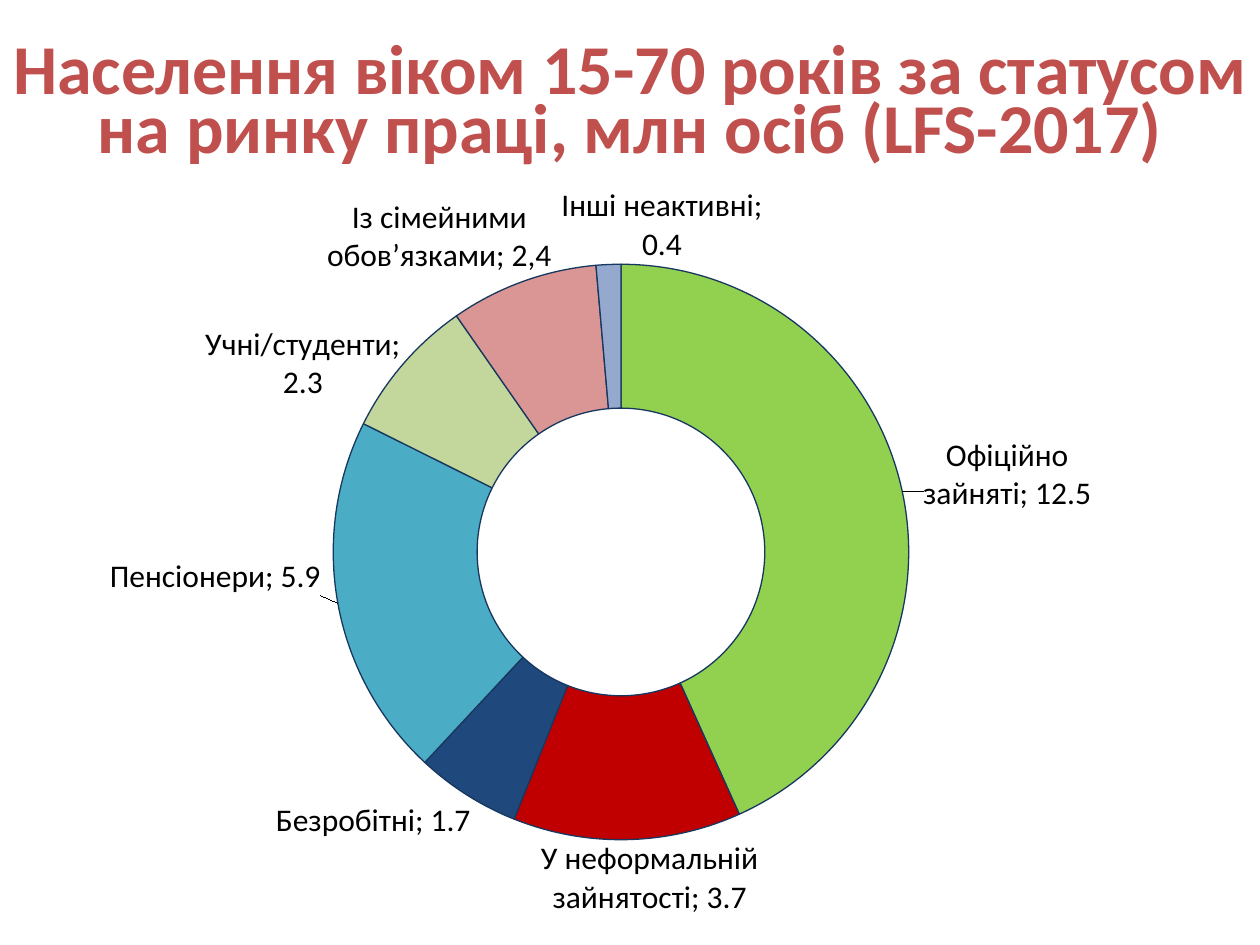
from math import cos, pi, sin

from lxml import etree
from pptx import Presentation
from pptx import util as u
from pptx.chart import data as chart_data
from pptx.dml import color
from pptx.enum import chart as charts, text
from pptx.oxml import parse_xml
from pptx.oxml.ns import nsdecls, qn

Cm = u.Cm
FONT = "Calibri"
COLOURS = {
    "title": "C0504D", "text": "000000", "outline": "17375E",
    "official": "92D050", "informal": "C00000", "unemployed": "1F497D",
    "retired": "4BACC6", "students": "C3D69B", "family": "D99694", "other": "95A9CF",
}
NUMBER_FORMAT = r"##0.0;\-##0.0;0"
# Ring box as fractions of the chart: left, top, width, height
PLOT = {"x": 0.248, "y": 0.108, "w": 0.48, "h": 0.784}

# Category, value, colour, label centre in cm from the chart corner, own label text
STATUSES = [
    ("Офіційно зайняті", 12.5, "official", (19.59, 5.84), None),
    ("У неформальній зайнятості", 3.7, "informal", (12.39, 13.97), None),
    ("Безробітні", 1.7, "unemployed", (6.81, 12.82), None),
    ("Пенсіонери", 5.9, "retired", (3.64, 7.9), None),
    ("Учні/студенти", 2.3, "students", (5.4, 3.6), None),
    ('Виконують сімейні обов"язки', 2.4, "family", (8.16, 1.04),
     "Із сімейними обов’язками; 2,4"),
    ("Інші неактивні", 0.4, "other", (12.64, 0.8), None),
]


def rgb(name):
    return color.RGBColor.from_string(COLOURS[name])


def set_font(font, size, colour, bold=False):
    for attribute, value in {"name": FONT, "size": u.Pt(size), "bold": bold}.items():
        setattr(font, attribute, value)
    font.color.rgb = rgb(colour)


def add_title(slide, left, top, width, height):
    frame = slide.shapes.add_textbox(left, top, width, height).text_frame
    settings = {"word_wrap": True, "vertical_anchor": text.MSO_ANCHOR.MIDDLE,
                "margin_left": 0, "margin_right": 0}
    for attribute, value in settings.items():
        setattr(frame, attribute, value)
    paragraph = frame.paragraphs[0]
    paragraph.alignment = text.PP_ALIGN.CENTER
    paragraph.line_spacing = 0.7
    run = paragraph.add_run()
    run.text = "Населення віком 15-70 років за статусом на ринку праці, млн осіб (LFS-2017)"
    set_font(run.font, 40, "title", bold=True)


def label_offsets(width, height):
    """Shift of each label from the middle of its ring segment, as chart fractions."""
    centre_x = (PLOT["x"] + PLOT["w"] / 2) * width
    centre_y = (PLOT["y"] + PLOT["h"] / 2) * height
    radius = min(PLOT["w"] * width, PLOT["h"] * height) / 2 * 0.75
    total = sum(status[1] for status in STATUSES)
    passed = 0
    for _, value, _, (x, y), _ in STATUSES:
        angle = 2 * pi * (passed + value / 2) / total
        passed += value
        yield ((Cm(x) - centre_x - radius * sin(angle)) / width,
               (Cm(y) - centre_y + radius * cos(angle)) / height)


def layout_xml(**values):
    items = "".join(f'<c:{key} val="{value}"/>' for key, value in values.items())
    return f"<c:layout><c:manualLayout>{items}</c:manualLayout></c:layout>"


def labels_xml(width, height):
    number_format = f'<c:numFmt formatCode="{NUMBER_FORMAT}" sourceLinked="0"/>'
    shown = ('<c:showLegendKey val="0"/><c:showVal val="1"/><c:showCatName val="1"/>'
             '<c:showSerName val="0"/><c:showPercent val="0"/><c:showBubbleSize val="0"/>'
             "<c:separator>; </c:separator>")
    labels = ""
    for index, (x, y) in enumerate(label_offsets(width, height)):
        own_text = STATUSES[index][4]
        rich = "" if own_text is None else (
            '<c:tx><c:rich><a:bodyPr/><a:p><a:r><a:rPr lang="uk-UA" sz="1800"/>'
            f"<a:t>{own_text}</a:t></a:r></a:p></c:rich></c:tx>")
        labels += (f'<c:dLbl><c:idx val="{index}"/>{layout_xml(x=round(x, 3), y=round(y, 3))}'
                   f"{rich}{number_format}{shown}</c:dLbl>")
    return (f'<c:dLbls {nsdecls("c", "a")}>{labels}{number_format}{shown}'
            '<c:showLeaderLines val="1"/></c:dLbls>')


def add_status_chart(slide, left, top, width, height):
    data = chart_data.CategoryChartData(number_format="0.0")
    data.categories = [status[0] for status in STATUSES]
    data.add_series("Series 1", [status[1] for status in STATUSES])
    chart = slide.shapes.add_chart(charts.XL_CHART_TYPE.DOUGHNUT,
                                   left, top, width, height, data).chart
    chart.has_legend = False
    chart.has_title = False
    set_font(chart.font, 18, "text")

    # Segments
    plot = chart.plots[0]
    plot.vary_by_categories = True
    series = plot.series[0]
    for index, status in enumerate(STATUSES):
        segment = series.points[index].format
        segment.fill.solid()
        segment.fill.fore_color.rgb = rgb(status[2])
        segment.line.color.rgb = rgb("outline")
        segment.line.width = u.Pt(0.75)

    # Labels outside the ring
    categories = series._element.find(qn("c:cat"))
    categories.addprevious(parse_xml(labels_xml(width, height)))

    # Ring size and place
    ring = next(chart._chartSpace.iter(qn("c:doughnutChart")))
    hole = ring.find(qn("c:holeSize"))
    if hole is None:
        hole = etree.SubElement(ring, qn("c:holeSize"))
    hole.set("val", "50")
    area = ring.getparent()
    old_layout = area.find(qn("c:layout"))
    if old_layout is not None:
        area.remove(old_layout)
    placed = layout_xml(layoutTarget="inner", xMode="edge", yMode="edge", **PLOT)
    area.insert(0, parse_xml(placed.replace("<c:layout>", f'<c:layout {nsdecls("c")}>', 1)))


def main():
    presentation = Presentation()
    presentation.slide_width, presentation.slide_height = Cm(25.4), Cm(19.05)
    slide = presentation.slides.add_slide(presentation.slide_layouts[6])
    add_title(slide, Cm(0), Cm(0.76), Cm(25.4), Cm(2.77))
    add_status_chart(slide, Cm(0.71), Cm(3.73), Cm(24.2), Cm(14.8))
    presentation.save("out.pptx")


if __name__ == "__main__":
    main()
